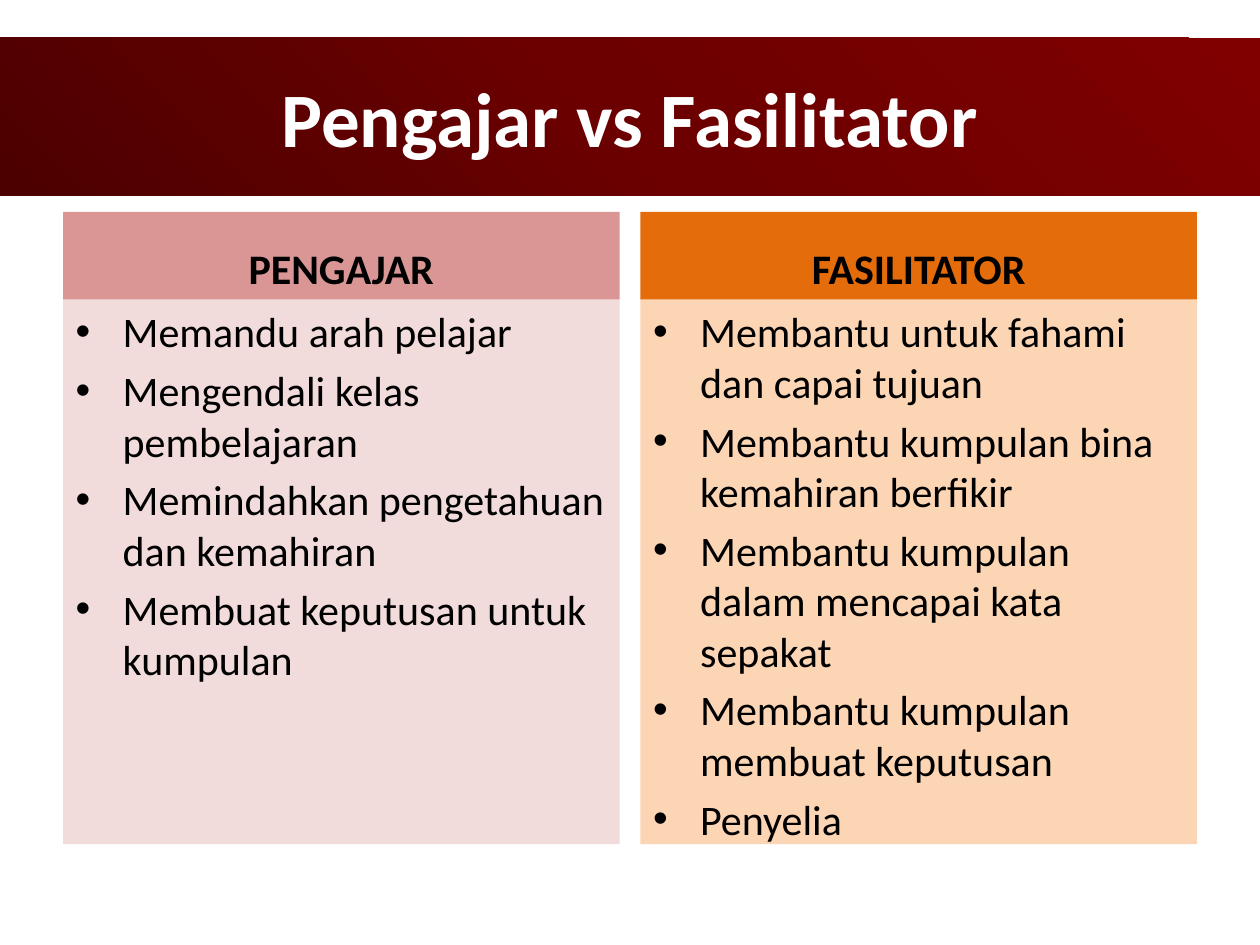
from dataclasses import dataclass

from lxml import etree
from pptx import Presentation
from pptx import util as u
from pptx.dml.color import RGBColor
from pptx.enum import text
from pptx.oxml import ns

FONT = "Calibri"
BLACK = RGBColor(0x00, 0x00, 0x00)
WHITE = RGBColor(0xFF, 0xFF, 0xFF)
ROSE = RGBColor(0xD9, 0x96, 0x94)
PALE_ROSE = RGBColor(0xF2, 0xDC, 0xDB)
ORANGE = RGBColor(0xE4, 0x6C, 0x0A)
PALE_ORANGE = RGBColor(0xFC, 0xD5, 0xB5)
BANNER_STOPS = [(0, RGBColor(0x4C, 0x00, 0x00)),
                (50, RGBColor(0x6C, 0x00, 0x00)),
                (100, RGBColor(0x80, 0x00, 0x00))]

SLIDE_W, SLIDE_H = u.Cm(25.4), u.Cm(19.05)
MARGIN, COL_W = u.Cm(1.27), u.Cm(11.22)
HEAD_TOP, HEAD_H, LIST_H = u.Cm(4.27), u.Cm(1.77), u.Cm(10.98)
INDENT = u.Cm(0.95)


@dataclass
class Column:
    heading: str
    items: list[str]
    head_fill: RGBColor
    list_fill: RGBColor
    left: int
    head_idx: int  # placeholder indices in the comparison layout
    list_idx: int


COLUMNS = [
    Column("PENGAJAR",
           ["Memandu arah pelajar",
            "Mengendali kelas pembelajaran",
            "Memindahkan pengetahuan dan kemahiran",
            "Membuat keputusan untuk kumpulan"],
           ROSE, PALE_ROSE, MARGIN, 1, 2),
    Column("FASILITATOR",
           ["Membantu untuk fahami dan capai tujuan",
            "Membantu kumpulan bina kemahiran berfikir",
            "Membantu kumpulan dalam mencapai kata sepakat",
            "Membantu kumpulan membuat keputusan",
            "Penyelia"],
           ORANGE, PALE_ORANGE, SLIDE_W - MARGIN - COL_W, 3, 4),
]


def place(sp, left: int, top: int, width: int, height: int) -> None:
    sp.left, sp.top, sp.width, sp.height = left, top, width, height


def write(sp, lines: list[str], anchor, size: int, color: RGBColor,
          heading: bool) -> None:
    tf = sp.text_frame
    tf.text = "\n".join(lines)
    tf.word_wrap = True
    tf.auto_size = text.MSO_AUTO_SIZE.NONE
    tf.vertical_anchor = anchor
    tf.paragraphs[0].space_before = u.Pt(0)
    for p in tf.paragraphs:
        p.alignment = text.PP_ALIGN.CENTER if heading else text.PP_ALIGN.LEFT
        if not heading:
            add_bullet(p)
        for r in p.runs:
            r.font.name, r.font.size, r.font.bold = FONT, u.Pt(size), heading
            r.font.color.rgb = color


def add_bullet(p) -> None:
    pPr = p._p.get_or_add_pPr()
    pPr.set("marL", str(INDENT))
    pPr.set("indent", str(-INDENT))
    etree.SubElement(pPr, ns.qn("a:buFont")).set("typeface", "Arial")
    etree.SubElement(pPr, ns.qn("a:buChar")).set("char", "•")


def fill_radial(sp, stops: list[tuple[int, RGBColor]]) -> None:
    """Circular gradient spreading from the bottom left corner."""
    sp.fill.gradient()
    grad = sp._element.spPr.find(ns.qn("a:gradFill"))
    for child in list(grad):
        grad.remove(child)
    gs_list = etree.SubElement(grad, ns.qn("a:gsLst"))
    for percent, color in stops:
        gs = etree.SubElement(gs_list, ns.qn("a:gs"), pos=str(percent * 1000))
        etree.SubElement(gs, ns.qn("a:srgbClr"), val=str(color))
    circle = etree.SubElement(grad, ns.qn("a:path"))
    circle.set("path", "circle")
    etree.SubElement(circle, ns.qn("a:fillToRect"), t="100000", r="100000")


def draw_column(slide, col: Column) -> None:
    by_idx = {sp.placeholder_format.idx: sp for sp in slide.placeholders}
    head, body = by_idx[col.head_idx], by_idx[col.list_idx]
    place(head, col.left, HEAD_TOP, COL_W, HEAD_H)
    place(body, col.left, HEAD_TOP + HEAD_H, COL_W, LIST_H)
    for sp, color in ((head, col.head_fill), (body, col.list_fill)):
        sp.fill.solid()
        sp.fill.fore_color.rgb = color
    write(head, [col.heading], text.MSO_ANCHOR.BOTTOM, 24, BLACK, True)
    write(body, col.items, text.MSO_ANCHOR.TOP, 24, BLACK, False)


def main() -> None:
    prs = Presentation()
    prs.slide_width, prs.slide_height = SLIDE_W, SLIDE_H
    slide = prs.slides.add_slide(prs.slide_layouts.get_by_name("Comparison"))

    # Title banner
    title = slide.shapes.title
    place(title, 0, u.Cm(0.76), SLIDE_W, u.Cm(3.18))
    fill_radial(title, BANNER_STOPS)
    write(title, ["Pengajar vs Fasilitator"], text.MSO_ANCHOR.MIDDLE, 44,
          WHITE, True)

    # Two compared roles
    for col in COLUMNS:
        draw_column(slide, col)

    prs.save("out.pptx")


if __name__ == "__main__":
    main()
